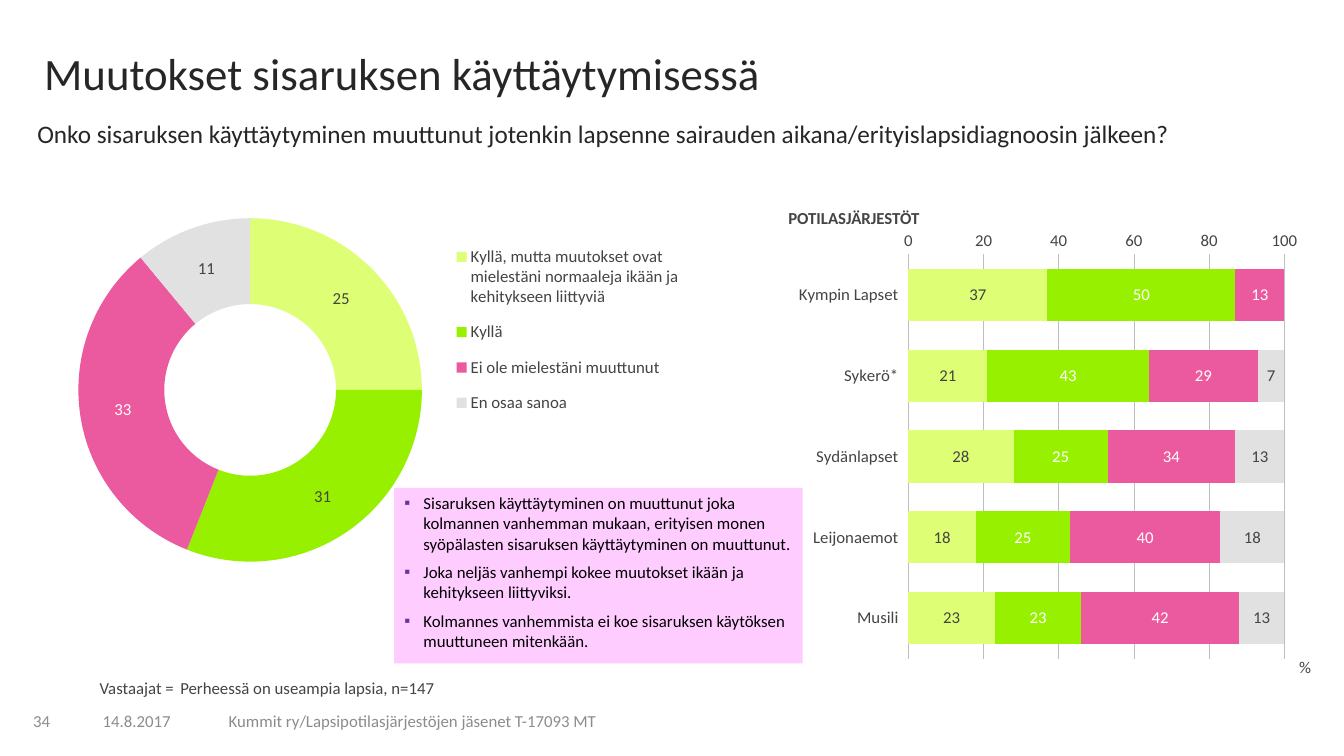
from lxml import etree
from pptx import Presentation
from pptx import util as u
from pptx.chart.data import CategoryChartData
from pptx.dml.color import RGBColor
from pptx.enum import chart as ch, text
from pptx.oxml import ns

FONT = "Calibri"
INK = RGBColor(0x26, 0x26, 0x26)
GREY = RGBColor(0x44, 0x44, 0x44)
FOOTER = RGBColor(0x8C, 0x8C, 0x8C)
GRID = RGBColor(0xBC, 0xBE, 0xC0)
BLACK = RGBColor(0x00, 0x00, 0x00)
WHITE = RGBColor(0xFF, 0xFF, 0xFF)
PINK_BOX = RGBColor(0xFF, 0xCC, 0xFF)
LIME = RGBColor(0xDE, 0xFF, 0x75)
GREEN = RGBColor(0x96, 0xF0, 0x00)
PINK = RGBColor(0xEB, 0x59, 0x9E)
SILVER = RGBColor(0xE1, 0xE1, 0xE1)
ANSWER_COLORS = [LIME, GREEN, PINK, SILVER]


def style(font, size, color, bold=False):
    font.name, font.size, font.bold = FONT, u.Pt(size), bold
    font.color.rgb = color


def place(parent, index, inner=False, **fractions):
    """Give a chart part a manual layout in fractions of the chart."""
    for old in parent.findall(ns.qn("c:layout")):
        parent.remove(old)
    layout = etree.Element(ns.qn("c:layout"))
    manual = etree.SubElement(layout, ns.qn("c:manualLayout"))
    settings = {"layoutTarget": "inner"} if inner else {}
    settings |= {"xMode": "edge", "yMode": "edge", **fractions}
    for tag, value in settings.items():
        etree.SubElement(manual, ns.qn("c:" + tag)).set("val", str(value))
    parent.insert(index, layout)


deck = Presentation()
deck.slide_width, deck.slide_height = u.Inches(13.33), u.Inches(7.5)
page = deck.slides.add_slide(deck.slide_layouts[1])

# Survey question in the title placeholder
question = page.shapes.title
question.left, question.top = u.Inches(0.27), u.Inches(1.16)
question.width, question.height = u.Inches(12.88), u.Inches(0.68)
frame = question.text_frame
frame.auto_size = text.MSO_AUTO_SIZE.NONE
frame.vertical_anchor = text.MSO_ANCHOR.TOP
para = frame.paragraphs[0]
para.alignment, para.line_spacing = text.PP_ALIGN.LEFT, 0.9
span = para.add_run()
span.text = ("Onko sisaruksen käyttäytyminen muuttunut jotenkin lapsenne "
             "sairauden aikana/erityislapsidiagnoosin jälkeen?")
style(span.font, 18, INK)

# Heading, captions and footer
TOP, MIDDLE = text.MSO_ANCHOR.TOP, text.MSO_ANCHOR.MIDDLE
labels = [
    ("Muutokset sisaruksen käyttäytymisessä", 0.34, 0.46, 12.07, 0.68, 32, INK, False, TOP),
    ("POTILASJÄRJESTÖT", 7.72, 2.03, 1.55, 0.28, 12, GREY, True, TOP),
    ("Vastaajat =", 0.89, 6.7, 1.82, 0.28, 12, GREY, False, TOP),
    ("Perheessä on useampia lapsia, n=147", 1.69, 6.7, 3.1, 0.28, 12, GREY, False, TOP),
    ("34", 0.23, 6.95, 0.44, 0.4, 12, FOOTER, False, MIDDLE),
    ("14.8.2017", 0.92, 6.95, 1.01, 0.4, 12, FOOTER, False, MIDDLE),
    ("Kummit ry/Lapsipotilasjärjestöjen jäsenet T-17093 MT",
     2.17, 6.95, 4.56, 0.4, 12, FOOTER, False, MIDDLE),
]
for words, left, top, width, height, size, color, bold, anchor in labels:
    box = page.shapes.add_textbox(*map(u.Inches, (left, top, width, height)))
    box.text_frame.word_wrap = True
    box.text_frame.vertical_anchor = anchor
    para = box.text_frame.paragraphs[0]
    para.line_spacing = 0.9 if anchor == TOP else 1.0
    span = para.add_run()
    span.text = words
    style(span.font, size, color, bold)

# Doughnut of all answers
answers = CategoryChartData()
answers.categories = [
    "Kyllä, mutta muutokset ovat mielestäni normaaleja ikään ja kehitykseen liittyviä",
    "Kyllä", "Ei ole mielestäni muuttunut", "En osaa sanoa"]
answers.add_series("Kaikki", [25, 31, 33, 11])
doughnut = page.shapes.add_chart(
    ch.XL_CHART_TYPE.DOUGHNUT, u.Inches(0.66), u.Inches(1.93),
    u.Inches(6.54), u.Inches(3.68), answers).chart
style(doughnut.font, 12, BLACK)
doughnut.has_title = False
doughnut.has_legend = True
doughnut.legend.position = ch.XL_LEGEND_POSITION.RIGHT
doughnut.legend.include_in_layout = False
style(doughnut.legend.font, 12, GREY)
ring = doughnut.plots[0]
ring.vary_by_categories = True
ring_series = ring.series[0]
for index, color in enumerate(ANSWER_COLORS):
    fill = ring_series.points[index].format.fill
    fill.solid()
    fill.fore_color.rgb = color
ring_labels = ring_series.data_labels
ring_labels.show_value = True
ring_labels.show_percentage = False
ring_labels.number_format, ring_labels.number_format_is_linked = "#,##0", False
style(ring_labels.font, 12, GREY)
style(ring_series.points[2].data_label.font, 12, WHITE)
place(doughnut.plots[0]._element.getparent(), 0, True, x=0, y=0.064, w=0.557, h=0.926)
place(doughnut.legend._element, 1, x=0.57, y=0.1, w=0.38, h=0.53)

# Stacked bars by patient organisation
groups = CategoryChartData()
groups.categories = ["Kympin Lapset", "Sykerö*", "Sydänlapset", "Leijonaemot", "Musili"]
shares = [[37, 21, 28, 18, 23], [50, 43, 25, 25, 23],
          [13, 29, 34, 40, 42], [None, 7, 13, 18, 13]]
for category, values in zip(answers.categories, shares):
    groups.add_series(category.label, values)
bars = page.shapes.add_chart(
    ch.XL_CHART_TYPE.BAR_STACKED, u.Inches(7.72), u.Inches(2.29),
    u.Inches(5.35), u.Inches(4.55), groups).chart
style(bars.font, 12, BLACK)
bars.has_title = bars.has_legend = False
bar_plot = bars.plots[0]
bar_plot.vary_by_categories = False
bar_plot.gap_width, bar_plot.overlap = 55, 100
for series, color, ink in zip(bar_plot.series, ANSWER_COLORS, [GREY, WHITE, WHITE, GREY]):
    series.format.fill.solid()
    series.format.fill.fore_color.rgb = color
    bar_labels = series.data_labels
    bar_labels.show_value = True
    bar_labels.position = ch.XL_LABEL_POSITION.CENTER
    bar_labels.number_format, bar_labels.number_format_is_linked = "#,##0", False
    style(bar_labels.font, 12, ink)

# Axes
names, scale = bars.category_axis, bars.value_axis
for axis in (names, scale):
    axis.major_tick_mark = axis.minor_tick_mark = ch.XL_TICK_MARK.NONE
    axis.format.line.fill.background()
    style(axis.tick_labels.font, 12, GREY)
names.reverse_order = True
names.crosses = ch.XL_AXIS_CROSSES.MAXIMUM
names.tick_label_position = ch.XL_TICK_LABEL_POSITION.LOW
scale.minimum_scale, scale.maximum_scale, scale.major_unit = 0, 100.01, 20
scale.tick_labels.number_format = "General"
scale.tick_labels.number_format_is_linked = False
scale.has_major_gridlines = True
scale.major_gridlines.format.line.color.rgb = GRID
scale.major_gridlines.format.line.width = u.Pt(0.5)
span = scale.axis_title.text_frame.paragraphs[0].add_run()
span.text = "%"
style(span.font, 12, GREY)
place(scale.axis_title._element, 1, x=0.96, y=0.92)
place(bar_plot._element.getparent(), 0, True, x=0.241, y=0.037, w=0.697, h=0.895)

# Findings in the body placeholder, in front of the charts
findings = page.placeholders[1]
findings.left, findings.top = u.Inches(3.91), u.Inches(4.84)
findings.width, findings.height = u.Inches(4.05), u.Inches(1.74)
findings.fill.solid()
findings.fill.fore_color.rgb = PINK_BOX
findings.element.getparent().append(findings.element)
frame = findings.text_frame
frame.auto_size = text.MSO_AUTO_SIZE.NONE
frame.vertical_anchor = text.MSO_ANCHOR.TOP
points = [
    "Sisaruksen käyttäytyminen on muuttunut joka kolmannen vanhemman mukaan, "
    "erityisen monen syöpälasten sisaruksen käyttäytyminen on muuttunut.",
    "Joka neljäs vanhempi kokee muutokset ikään ja kehitykseen liittyviksi.",
    "Kolmannes vanhemmista ei koe sisaruksen käytöksen muuttuneen mitenkään.",
]
for index, words in enumerate(points):
    para = frame.add_paragraph() if index else frame.paragraphs[0]
    para.space_before = u.Pt(6 if index else 0)
    props = para._p.get_or_add_pPr()
    props.set("marL", str(u.Inches(0.19)))
    props.set("indent", str(-u.Inches(0.19)))
    bullet_color = etree.SubElement(props, ns.qn("a:buClr"))
    etree.SubElement(bullet_color, ns.qn("a:srgbClr")).set("val", "7030A0")
    etree.SubElement(props, ns.qn("a:buChar")).set("char", "▪")
    span = para.add_run()
    span.text = words
    style(span.font, 12, BLACK)

deck.save("out.pptx")
